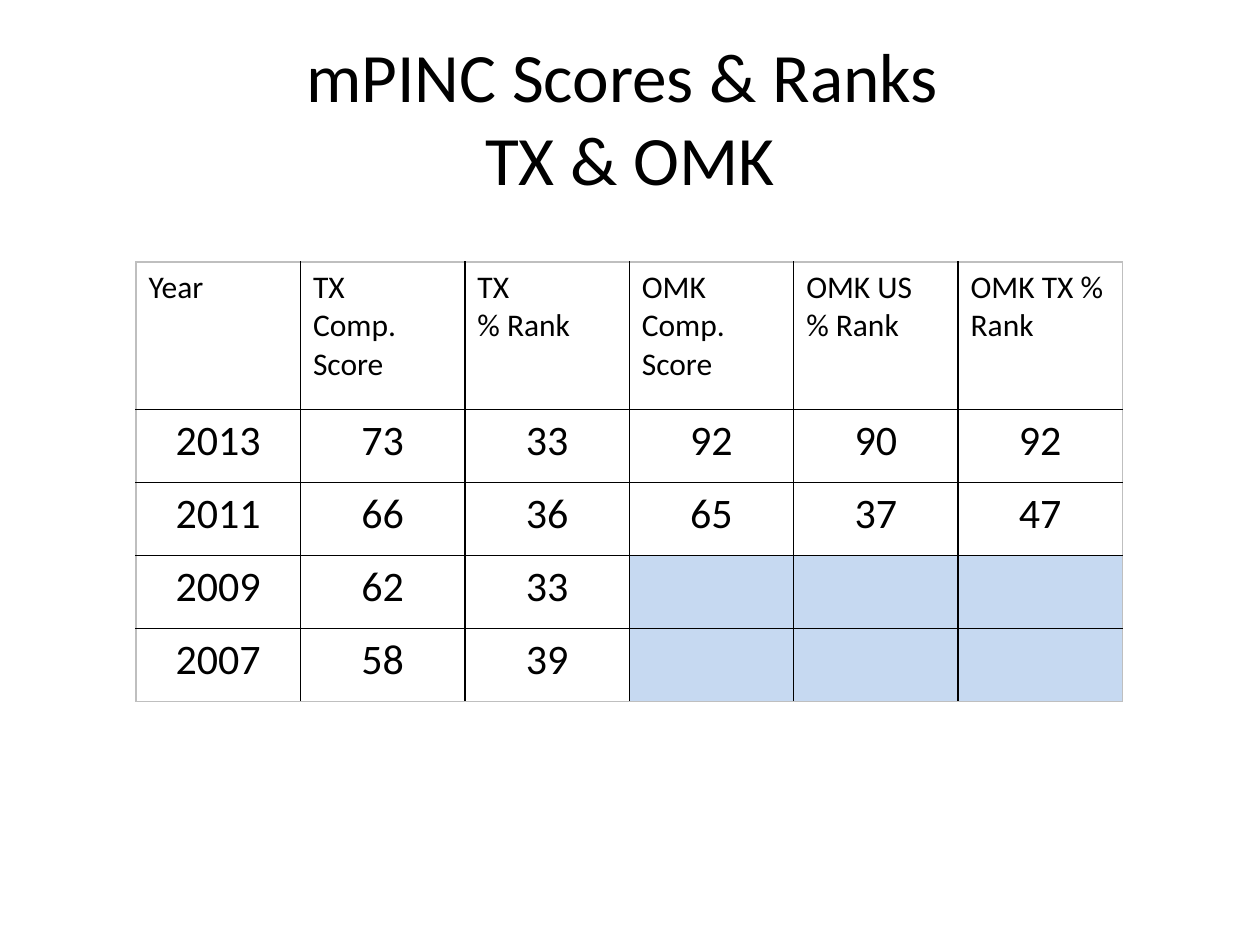
import dataclasses

import pptx
import pptx.dml.color
import pptx.enum.text
import pptx.oxml
import pptx.oxml.ns
import pptx.util
from pptx.util import Inches


@dataclasses.dataclass(frozen=True)
class Theme:
    font: str = "Calibri"
    ink: str = "000000"
    edge: str = "BFBFBF"
    blank: str = "C6D9F1"
    title: float = 39.6
    head: float = 18
    body: float = 24


THEME = Theme()
ALIGN = pptx.enum.text.PP_ALIGN
HEADS = ["Year", "TX\nComp.\nScore", "TX\n% Rank", "OMK Comp. Score",
         "OMK US\n% Rank", "OMK TX % Rank"]
SCORES = [
    [2013, 73, 33, 92, 90, 92],
    [2011, 66, 36, 65, 37, 47],
    [2009, 62, 33, None, None, None],
    [2007, 58, 39, None, None, None],
]


def write(frame, text, size, align):
    frame.text = text
    for para in frame.paragraphs:
        para.alignment = align
        para.font.name = THEME.font
        para.font.size = pptx.util.Pt(size)
        para.font.color.rgb = pptx.dml.color.RGBColor.from_string(THEME.ink)


def add_title(slide, text):
    box = slide.shapes.add_textbox(Inches(0.5), Inches(0.3), Inches(9), Inches(1.25))
    frame = box.text_frame
    frame.word_wrap = True
    frame.vertical_anchor = pptx.enum.text.MSO_ANCHOR.MIDDLE
    write(frame, text, THEME.title, ALIGN.CENTER)


def rule(cell, side, color):
    xml = (f'<a:{side} {pptx.oxml.ns.nsdecls("a")} w="12700"><a:solidFill>'
           f'<a:srgbClr val="{color}"/></a:solidFill></a:{side}>')
    cell._tc.get_or_add_tcPr().append(pptx.oxml.parse_xml(xml))


def style(cell, row, col, last_row, last_col):
    outer = {"lnL": col == 0, "lnR": col == last_col,
             "lnT": row == 0, "lnB": row == last_row}
    for side, edge in outer.items():
        rule(cell, side, THEME.edge if edge else THEME.ink)


def add_scores(slide):
    rows = [HEADS] + SCORES
    count = len(HEADS)
    shape = slide.shapes.add_table(len(rows), count, Inches(1.08), Inches(2.08),
                                   Inches(7.83), Inches(3.49))
    table = shape.table
    table.first_row = table.horz_banding = False
    for col in table.columns:
        col.width = Inches(7.83 / count)
    for r, values in enumerate(rows):
        table.rows[r].height = Inches(0.58 if r else 1.17)
        for c, value in enumerate(values):
            cell = table.cell(r, c)
            style(cell, r, c, len(rows) - 1, count - 1)
            if value is None:
                cell.fill.solid()
                cell.fill.fore_color.rgb = pptx.dml.color.RGBColor.from_string(THEME.blank)
                continue
            cell.fill.background()
            size, align = (THEME.body, ALIGN.CENTER) if r else (THEME.head, ALIGN.LEFT)
            write(cell.text_frame, str(value), size, align)


def main():
    deck = pptx.Presentation()
    deck.slide_width, deck.slide_height = Inches(10), Inches(7.5)
    slide = deck.slides.add_slide(deck.slide_layouts[6])
    add_title(slide, "mPINC Scores & Ranks \vTX & OMK")
    add_scores(slide)
    deck.save("out.pptx")


if __name__ == "__main__":
    main()
